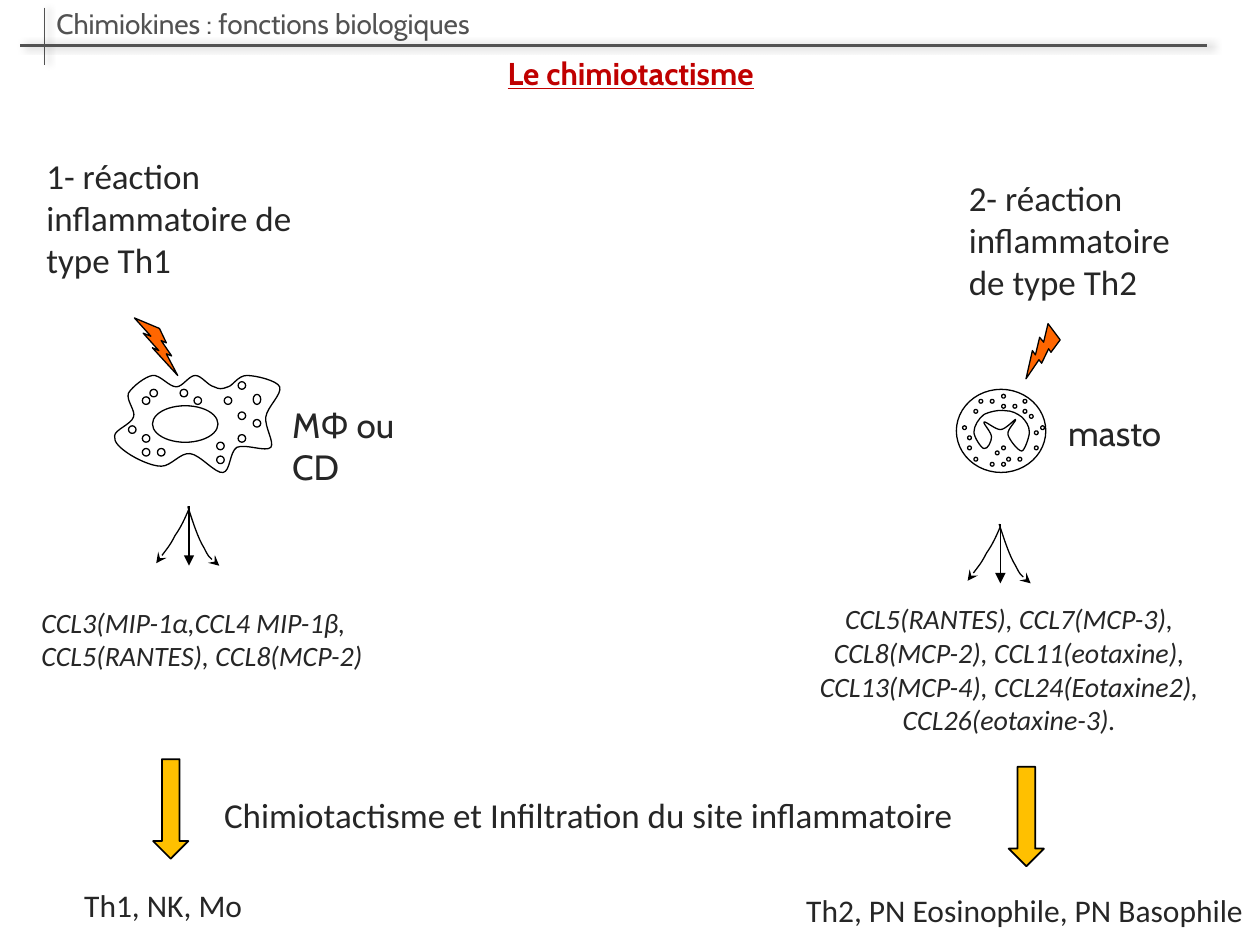
from pptx import Presentation
from pptx.dml.color import RGBColor
from pptx.enum.shapes import MSO_CONNECTOR, MSO_SHAPE
from pptx.enum.text import MSO_ANCHOR, MSO_AUTO_SIZE, PP_ALIGN
from pptx.oxml import parse_xml
from pptx.oxml.ns import nsdecls, qn
from pptx.oxml.xmlchemy import OxmlElement
from pptx.util import Inches, Pt

OVAL = MSO_SHAPE.OVAL
BOLT = MSO_SHAPE.LIGHTNING_BOLT
BLOCK_ARROW = MSO_SHAPE.RIGHT_ARROW
STRAIGHT = MSO_CONNECTOR.STRAIGHT
TOP, MIDDLE = MSO_ANCHOR.TOP, MSO_ANCHOR.MIDDLE
LEFT, CENTER = PP_ALIGN.LEFT, PP_ALIGN.CENTER

COLORS = {
    "heading": "525252",
    "title": "C00000",
    "text": "262626",
    "outline": "000000",
    "bolt": "FF6600",
    "arrow": "FFC000",
}

MACROPHAGE_OUTLINE = [
    (1.96, 2.98), (1.89, 2.98), (1.85, 3.06), (1.81, 3.07), (1.76, 3.09), (1.74, 3.09),
    (1.7, 3.07), (1.65, 3.06), (1.6, 2.98), (1.55, 2.98), (1.5, 2.98), (1.45, 3.07),
    (1.4, 3.07), (1.34, 3.07), (1.27, 2.97), (1.21, 2.98), (1.15, 2.99), (1.05, 3.07),
    (1.02, 3.12), (1, 3.18), (1.08, 3.26), (1.06, 3.31), (1.04, 3.37), (0.91, 3.41),
    (0.91, 3.46), (0.9, 3.51), (0.96, 3.56), (1.02, 3.6), (1.08, 3.64), (1.2, 3.7),
    (1.28, 3.7), (1.36, 3.7), (1.43, 3.59), (1.51, 3.6), (1.59, 3.61), (1.71, 3.76),
    (1.77, 3.75), (1.83, 3.74), (1.82, 3.59), (1.88, 3.55), (1.95, 3.52), (2.11, 3.59),
    (2.15, 3.55), (2.18, 3.51), (2.1, 3.39), (2.11, 3.31), (2.12, 3.23), (2.24, 3.13),
    (2.22, 3.07), (2.2, 3.02), (2.03, 2.98), (1.96, 2.98),
]
MACROPHAGE_GRANULES = [
    (1.89, 3.27), (1.78, 3.15), (1.89, 3.03), (2.01, 3.33), (1.89, 3.45),
    (1.72, 3.51), (1.72, 3.62), (1.13, 3.45), (1.43, 3.09), (1.13, 3.56), (1.54, 3.15),
    (1.25, 3.56), (1.02, 3.38), (1.13, 3.15), (1.19, 3.09),
]
MAST_NUCLEUS = [
    (8.11, 3.31), (8.07, 3.28), (8.03, 3.26), (7.98, 3.26), (7.93, 3.25), (7.85, 3.27),
    (7.81, 3.29), (7.77, 3.32), (7.73, 3.38), (7.73, 3.43), (7.73, 3.47), (7.79, 3.56),
    (7.81, 3.56), (7.84, 3.57), (7.87, 3.5), (7.87, 3.47), (7.87, 3.43), (7.8, 3.36),
    (7.81, 3.35), (7.82, 3.34), (7.9, 3.41), (7.94, 3.41), (7.98, 3.41), (8.05, 3.33),
    (8.06, 3.33), (8.07, 3.34), (7.99, 3.41), (8, 3.45), (8.01, 3.49), (8.08, 3.58),
    (8.11, 3.58), (8.13, 3.58), (8.17, 3.47), (8.17, 3.43), (8.17, 3.38), (8.14, 3.34),
    (8.11, 3.31),
]
MAST_GRANULES = [
    (8.08, 3.63), (8.21, 3.54), (7.95, 3.67), (7.99, 3.63), (7.95, 3.54), (7.9, 3.58),
    (7.86, 3.67), (7.73, 3.63), (7.68, 3.54), (8.21, 3.42), (8.26, 3.38), (8.17, 3.29),
    (8.12, 3.17), (8.12, 3.25), (8.04, 3.21), (7.95, 3.13), (7.95, 3.21), (7.86, 3.17),
    (7.77, 3.17), (7.73, 3.25), (7.64, 3.38), (7.68, 3.46),
]
SECRETION_CURVES = [
    [(0, 0.02), (-0.03, 0.09), (-0.06, 0.16), (-0.11, 0.23),
     (-0.15, 0.31), (-0.21, 0.38), (-0.26, 0.45)],
    [(-0.01, 0), (0.03, 0.12), (0.07, 0.25), (0.12, 0.33),
     (0.16, 0.41), (0.2, 0.44), (0.24, 0.47)],
]


def color(name):
    return RGBColor.from_string(COLORS[name])


def add_text(slide, box, text, size, font="Calibri", tint="text", align=LEFT,
             anchor=TOP, wrap=True, bold=None, italic=None, underline=None):
    text_frame = slide.shapes.add_textbox(*map(Inches, box)).text_frame
    text_frame.text = text
    text_frame.word_wrap = wrap
    text_frame.auto_size = MSO_AUTO_SIZE.SHAPE_TO_FIT_TEXT
    text_frame.vertical_anchor = anchor
    for paragraph in text_frame.paragraphs:
        paragraph.alignment = align
        for run in paragraph.runs:
            run.font.name = font
            run.font.size = Pt(size)
            run.font.color.rgb = color(tint)
            run.font.bold, run.font.italic, run.font.underline = bold, italic, underline


def set_outline(shape, width=0.75, tint="outline", arrowhead=None):
    shape.line.color.rgb = color(tint)
    shape.line.width = Pt(width)
    if arrowhead:
        tail = OxmlElement("a:tailEnd")
        tail.set("type", arrowhead)
        shape.element.spPr.find(qn("a:ln")).append(tail)


def add_preset(shapes, kind, box, fill=None, rotation=0, width=0.75):
    shape = shapes.add_shape(kind, *map(Inches, box))
    shape.shadow.inherit = False
    shape.rotation = rotation
    if fill:
        shape.fill.solid()
        shape.fill.fore_color.rgb = color(fill)
    else:
        shape.fill.background()
    set_outline(shape, width)


def add_curve(shapes, points, close=False, arrowhead=None):
    start, *others = [(Inches(x), Inches(y)) for x, y in points]
    builder = shapes.build_freeform(*start, scale=1.0)
    builder.add_line_segments(others, close=close)
    shape = builder.convert_to_shape()
    segments = list(shape.element.iter(qn("a:lnTo")))
    for first in range(0, len(segments), 3):
        bezier = OxmlElement("a:cubicBezTo")
        segments[first].addprevious(bezier)
        for segment in segments[first:first + 3]:
            bezier.append(segment[0])
            segment.getparent().remove(segment)
    shape.shadow.inherit = False
    shape.fill.background()
    set_outline(shape, arrowhead=arrowhead)


def add_line(slide, start, end, width=0.75, tint="outline", arrowhead=None, shadow=False):
    line = slide.shapes.add_connector(STRAIGHT, *map(Inches, start + end))
    set_outline(line, width, tint, arrowhead)
    effect = ""
    if shadow:
        effect = (f'<a:outerShdw blurRad="{Pt(4)}" dist="{Pt(3)}" dir="0" rotWithShape="0">'
                  '<a:srgbClr val="000000"><a:alpha val="40000"/></a:srgbClr></a:outerShdw>')
    line.element.spPr.append(
        parse_xml(f'<a:effectLst {nsdecls("a")}>{effect}</a:effectLst>'))


def add_granules(shapes, positions, diameter):
    for x, y in positions:
        add_preset(shapes, OVAL, (x, y, diameter, diameter))


def add_macrophage(slide):
    shapes = slide.shapes.add_group_shape().shapes
    add_curve(shapes, MACROPHAGE_OUTLINE, close=True)
    add_preset(shapes, OVAL, (1.21, 3.22, 0.52, 0.29))
    add_preset(shapes, OVAL, (2.01, 3.13, 0.06, 0.08))
    add_granules(shapes, MACROPHAGE_GRANULES, 0.06)


def add_mast_cell(slide):
    shapes = slide.shapes.add_group_shape().shapes
    add_preset(shapes, OVAL, (7.59, 3.09, 0.71, 0.66))
    add_curve(shapes, MAST_NUCLEUS, close=True)
    add_granules(shapes, MAST_GRANULES, 0.03)


def add_secretion(slide, x, y):
    for curve in SECRETION_CURVES:
        add_curve(slide.shapes, [(x + dx, y + dy) for dx, dy in curve], arrowhead="stealth")
    add_line(slide, (x, y), (x, y + 0.47), arrowhead="triangle")


def main():
    presentation = Presentation()
    presentation.slide_width, presentation.slide_height = Inches(10), Inches(7.5)
    slide = presentation.slides.add_slide(presentation.slide_layouts[6])

    add_text(slide, (0.35, 0, 6.2, 0.37), "Chimiokines : fonctions biologiques", 16,
             font="Cabin", tint="heading")
    add_line(slide, (0.35, 0.06), (0.35, 0.52), 0.5, "heading", shadow=True)
    add_line(slide, (0.16, 0.36), (9.58, 0.36), 0, "heading", shadow=True)
    add_text(slide, (0.79, 0.38, 8.43, 0.4), "Le chimiotactisme", 18, font="Cabin",
             tint="title", align=CENTER, bold=True, underline=True)

    add_text(slide, (0.27, 1.18, 2.6, 1.11), "1- réaction inflammatoire de type Th1", 20)
    add_text(slide, (7.59, 1.35, 1.99, 1.11), "2- réaction inflammatoire de type Th2", 20)
    add_preset(slide.shapes, BOLT, (0.98, 2.62, 0.54, 0.23), "bolt", 33.8)
    add_preset(slide.shapes, BOLT, (8.07, 2.61, 0.38, 0.34), "bolt", 75.5)

    add_macrophage(slide)
    add_text(slide, (2.22, 3.15, 1.35, 0.78), "MΦ ou CD", 20, font="Cabin")
    add_mast_cell(slide)
    add_text(slide, (8.38, 3.22, 0.96, 0.44), "masto", 20, font="Cabin", wrap=False)
    add_secretion(slide, 1.5, 4.02)
    add_secretion(slide, 7.94, 4.16)

    add_text(slide, (0.23, 4.75, 3.43, 0.64),
             "CCL3(MIP-1α,CCL4 MIP-1β, CCL5(RANTES), CCL8(MCP-2)", 16,
             anchor=MIDDLE, italic=True)
    add_text(slide, (6.16, 4.72, 3.7, 1.18),
             "CCL5(RANTES), CCL7(MCP-3), CCL8(MCP-2), CCL11(eotaxine),\n"
             "CCL13(MCP-4), CCL24(Eotaxine2), CCL26(eotaxine-3).", 16,
             align=CENTER, anchor=MIDDLE, italic=True)

    add_preset(slide.shapes, BLOCK_ARROW, (0.96, 6.28, 0.79, 0.28), "arrow", 90, 1)
    add_preset(slide.shapes, BLOCK_ARROW, (7.75, 6.34, 0.79, 0.28), "arrow", 90, 1)
    add_text(slide, (1.68, 6.25, 6.05, 0.44),
             "Chimiotactisme et Infiltration du site inflammatoire", 20, wrap=False)
    add_text(slide, (0.57, 6.98, 1.47, 0.4), "Th1, NK, Mo", 18, wrap=False)
    add_text(slide, (6.3, 7.02, 3.69, 0.4), "Th2, PN Eosinophile, PN Basophile", 18)

    presentation.save("out.pptx")


if __name__ == "__main__":
    main()
